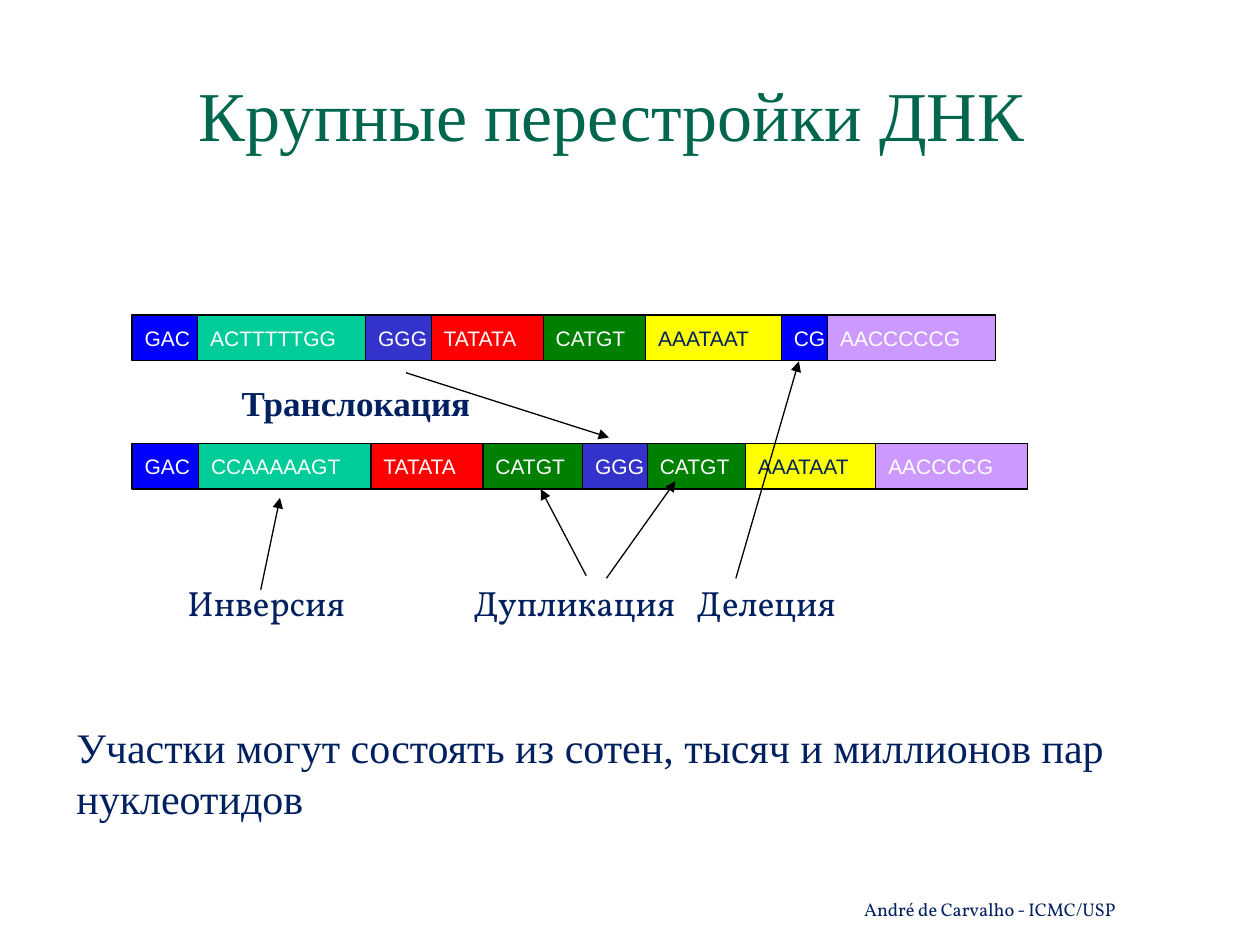
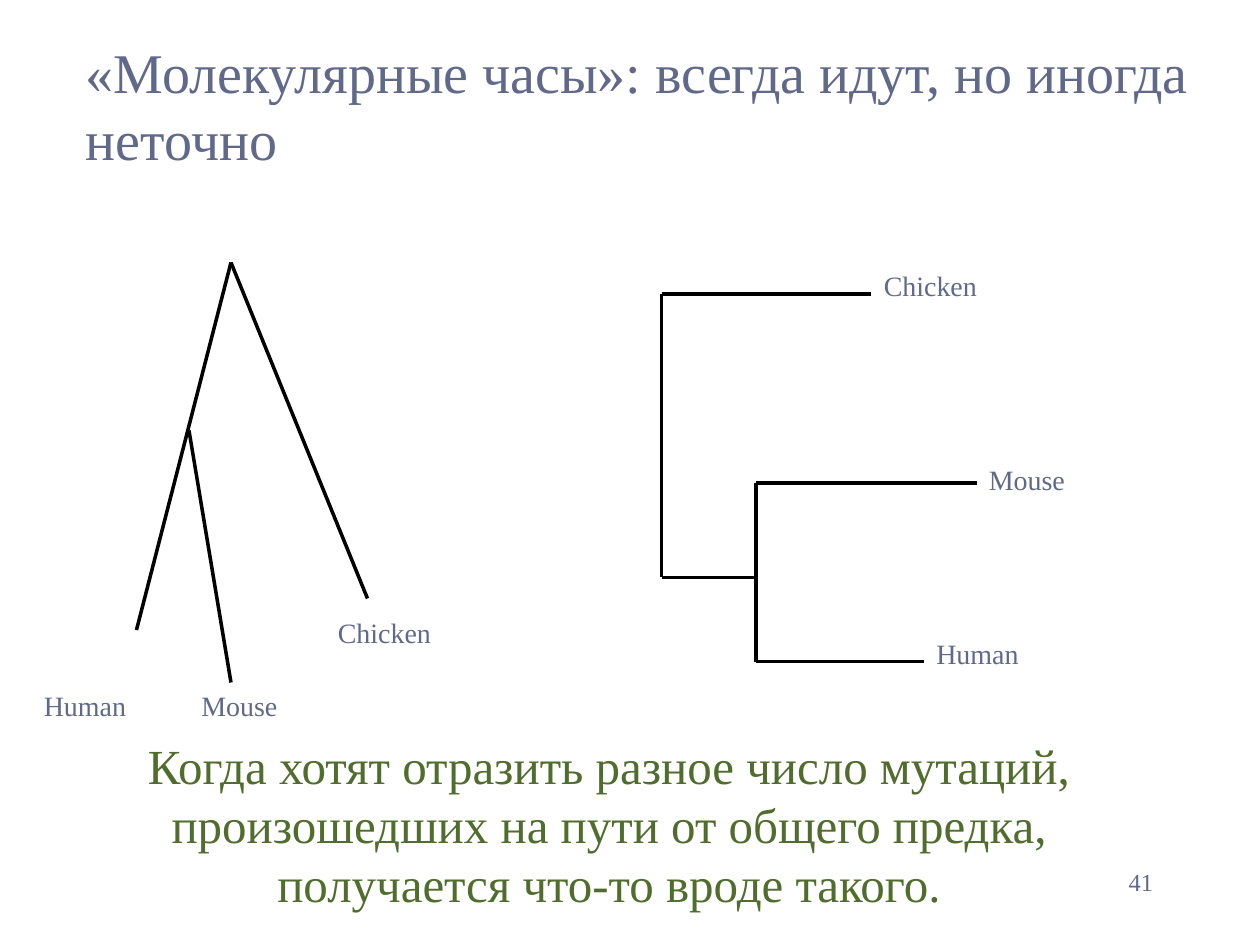
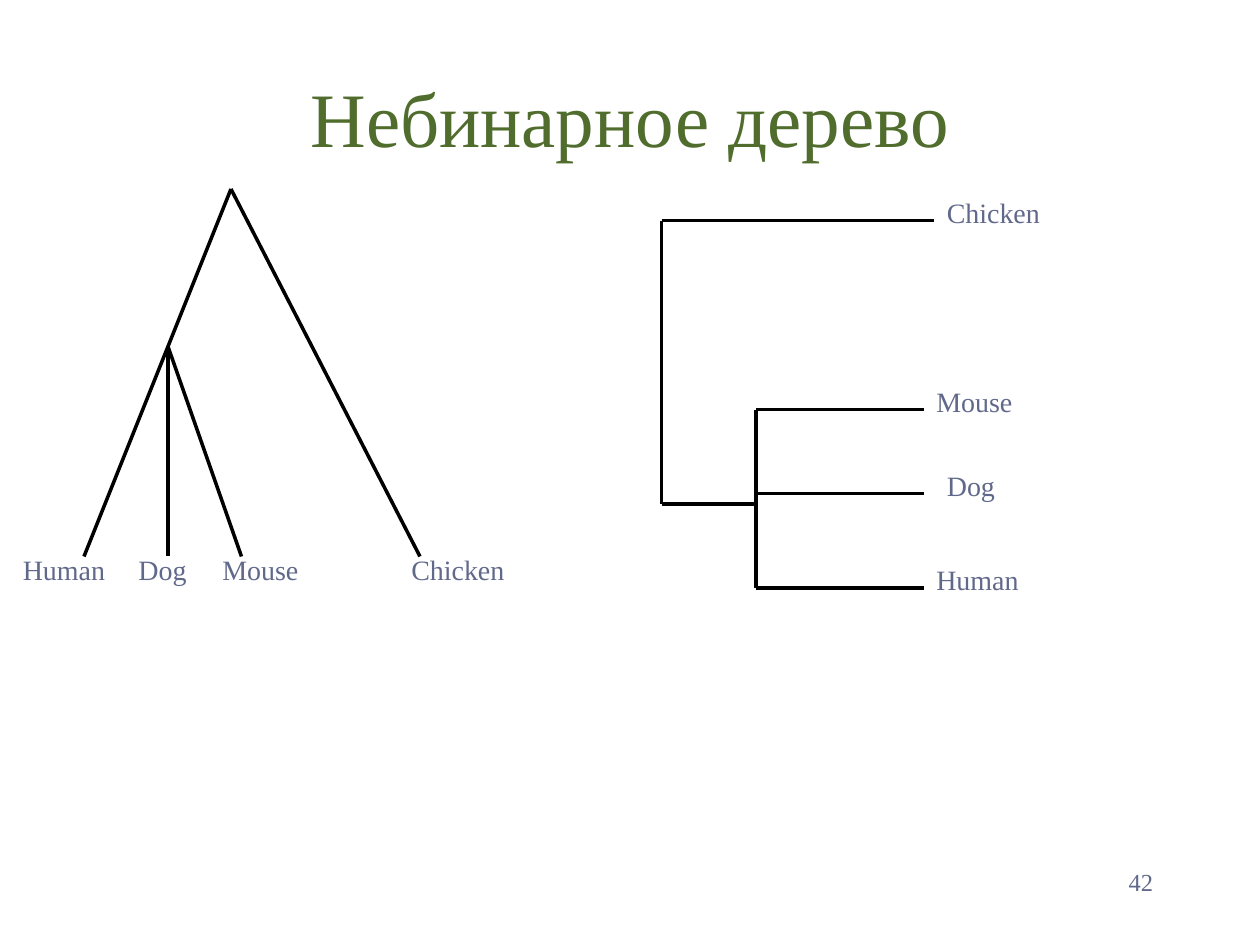
"""Build three slides on DNA rearrangements and evolutionary trees."""
from lxml.etree import SubElement
from pptx import Presentation
from pptx.dml.color import RGBColor
from pptx.enum.shapes import MSO_CONNECTOR, MSO_SHAPE
from pptx.enum.text import MSO_ANCHOR, PP_ALIGN
from pptx.oxml.ns import qn
from pptx.util import Pt

BLACK = RGBColor(0x00, 0x00, 0x00)
WHITE = RGBColor(0xFF, 0xFF, 0xFF)
NAVY = RGBColor(0x00, 0x20, 0x60)
PINE = RGBColor(0x00, 0x66, 0x4D)
OLIVE = RGBColor(0x50, 0x6D, 0x2D)
SLATE = RGBColor(0x61, 0x69, 0x8B)
BLUE = RGBColor(0x00, 0x00, 0xFF)
TEAL = RGBColor(0x00, 0xCC, 0x99)
INDIGO = RGBColor(0x33, 0x33, 0xCC)
RED = RGBColor(0xFF, 0x00, 0x00)
GREEN = RGBColor(0x00, 0x80, 0x00)
YELLOW = RGBColor(0xFF, 0xFF, 0x00)
LILAC = RGBColor(0xCC, 0x99, 0xFF)

SERIF = "Times New Roman"
BOOK = "Vollkorn"
SANS = "Arial"
LEFT, CENTER, RIGHT = PP_ALIGN.LEFT, PP_ALIGN.CENTER, PP_ALIGN.RIGHT
TOP, MIDDLE = MSO_ANCHOR.TOP, MSO_ANCHOR.MIDDLE


def add_text(page, text, place, size, color, font=SERIF, align=LEFT, anchor=TOP,
             margins=(7.2, 3.6), tabs=()):
    box = page.shapes.add_textbox(*[Pt(length) for length in place])
    frame = box.text_frame
    frame.text = text
    frame.word_wrap = True
    frame.vertical_anchor = anchor
    frame.margin_left = frame.margin_right = Pt(margins[0])
    frame.margin_top = frame.margin_bottom = Pt(margins[1])
    para = frame.paragraphs[0]
    para.alignment = align
    if tabs:
        tab_list = SubElement(para._p.get_or_add_pPr(), qn("a:tabLst"))
        for stop in tabs:
            SubElement(tab_list, qn("a:tab"), pos=str(Pt(stop)), algn="l")
    for span in para.runs:
        span.font.name = font
        span.font.size = Pt(size)
        span.font.color.rgb = color
    return box


def add_line(page, ends, width, arrow=False):
    line = page.shapes.add_connector(MSO_CONNECTOR.STRAIGHT, *[Pt(end) for end in ends])
    line.line.color.rgb = BLACK
    line.line.width = Pt(width)
    properties = line._element.spPr
    if arrow:
        SubElement(properties.find(qn("a:ln")), qn("a:tailEnd"), type="triangle")
    SubElement(properties, qn("a:effectLst"))


deck = Presentation()
deck.slide_width = Pt(720)
deck.slide_height = Pt(540)
blank = deck.slide_layouts[6]

page = deck.slides.add_slide(blank)
add_text(page, "André de Carvalho - ICMC/USP", (322, 509, 320.5, 21.5), 10.5, NAVY, BOOK,
         RIGHT, MIDDLE, (5, 3))
add_text(page, "Крупные перестройки ДНК", (108.5, 31, 502.5, 67.5), 40, PINE,
         anchor=MIDDLE, margins=(5, 3))
add_text(page, "Инверсия\tДупликация\tДелеция", (100, 328.5, 544.5, 31.5), 20, NAVY, BOOK,
         tabs=(163.5, 291))

strands = [
    (180, [("GAC", 37.5, BLUE), ("ACTTTTTGG", 96, TEAL), ("GGG", 37.5, INDIGO),
           ("TATATA", 64, RED), ("CATGT", 58.5, GREEN), ("AAATAAT", 77.5, YELLOW),
           ("CG", 26.5, BLUE), ("AACCCCCG", 96, LILAC)]),
    (253.5, [("GAC", 38, BLUE), ("CCAAAAAGT", 98.5, TEAL), ("TATATA", 64, RED),
             ("CATGT", 57, GREEN), ("GGG", 37, INDIGO), ("CATGT", 56, GREEN),
             ("AAATAAT", 74.5, YELLOW), ("AACCCCG", 86.5, LILAC)]),
]
for top, segments in strands:
    left = 75.5
    for bases, width, color in segments:
        segment = page.shapes.add_shape(MSO_SHAPE.RECTANGLE, Pt(left), Pt(top), Pt(width), Pt(26))
        segment.shadow.inherit = False
        segment.fill.solid()
        segment.fill.fore_color.rgb = color
        segment.line.color.rgb = BLACK
        segment.line.width = Pt(0.75)
        frame = segment.text_frame
        frame.text = bases
        frame.word_wrap = False
        frame.vertical_anchor = MIDDLE
        para = frame.paragraphs[0]
        para.alignment = LEFT
        span = para.runs[0]
        span.font.name = SANS
        span.font.size = Pt(12)
        span.font.color.rgb = NAVY if color == YELLOW else WHITE
        left += width

translocation = (232, 213, 348, 250)
inversion = (149, 337, 160, 284.5)
duplications = [(335, 329, 309, 279.5), (346.5, 330.5, 386, 275)]
deletion = (420.5, 330.5, 456.5, 206.5)
for ends in [translocation, inversion, *duplications, deletion]:
    add_line(page, ends, 0.75, arrow=True)

label = add_text(page, "Транслокация", (131, 214.5, 146, 31.5), 20, NAVY)
label.text_frame.word_wrap = False
label.text_frame.paragraphs[0].runs[0].font.bold = True
add_text(page, "Участки могут состоять из сотен, тысяч и миллионов пар нуклеотидов",
         (36.5, 409, 635, 65.5), 24, NAVY)

clock_page = deck.slides.add_slide(blank)
add_text(clock_page, "Когда хотят отразить разное число мутаций, произошедших на пути "
         "от общего предка, получается что-то вроде такого.",
         (24, 417, 648, 108), 28, OLIVE, align=CENTER, anchor=MIDDLE)
add_text(clock_page, "«Молекулярные часы»: всегда идут, но иногда неточно",
         (42, 18, 648, 84), 32, SLATE)

nonbinary_page = deck.slides.add_slide(blank)
add_text(nonbinary_page, "Небинарное дерево", (36, 21.5, 648, 90), 44, OLIVE,
         align=CENTER, anchor=MIDDLE)

clock_branches = [
    (132, 150, 78, 360), (132, 150, 210, 342), (108, 246, 132, 390),
    (378, 168, 378, 330), (378, 168, 498, 168), (378, 330, 432, 330),
    (432, 276, 432, 378), (432, 276, 558, 276), (432, 378, 528, 378),
]
clock_species = [
    ("Human", 18, 390), ("Mouse", 108, 390), ("Chicken", 186, 348),
    ("Chicken", 498, 150), ("Mouse", 558, 261), ("Human", 528, 360),
]
nonbinary_branches = [
    (132, 108, 48, 318), (132, 108, 240, 318), (96, 198, 138, 318), (96, 198, 96, 318),
    (378, 126, 378, 288), (378, 126, 534, 126), (378, 288, 432, 288),
    (432, 234, 432, 336), (432, 234, 528, 234), (432, 282, 528, 282), (432, 336, 528, 336),
]
nonbinary_species = [
    ("Human", 6, 312), ("Dog", 72, 312), ("Mouse", 120, 312), ("Chicken", 228, 312),
    ("Chicken", 534, 108), ("Mouse", 528, 216), ("Dog", 534, 264), ("Human", 528, 318),
]
label_widths = {"Human": 66, "Mouse": 90, "Chicken": 120, "Dog": 48}
trees = [
    (clock_page, clock_branches, clock_species, "41"),
    (nonbinary_page, nonbinary_branches, nonbinary_species, "42"),
]
for page, branches, species, number in trees:
    for ends in branches:
        add_line(page, ends, 2)
    for name, left, top in species:
        add_text(page, name, (left, top, label_widths[name], 26.5), 16, SLATE)
    add_text(page, number, (516, 492, 150, 36), 14, SLATE, align=RIGHT)

deck.save("out.pptx")
